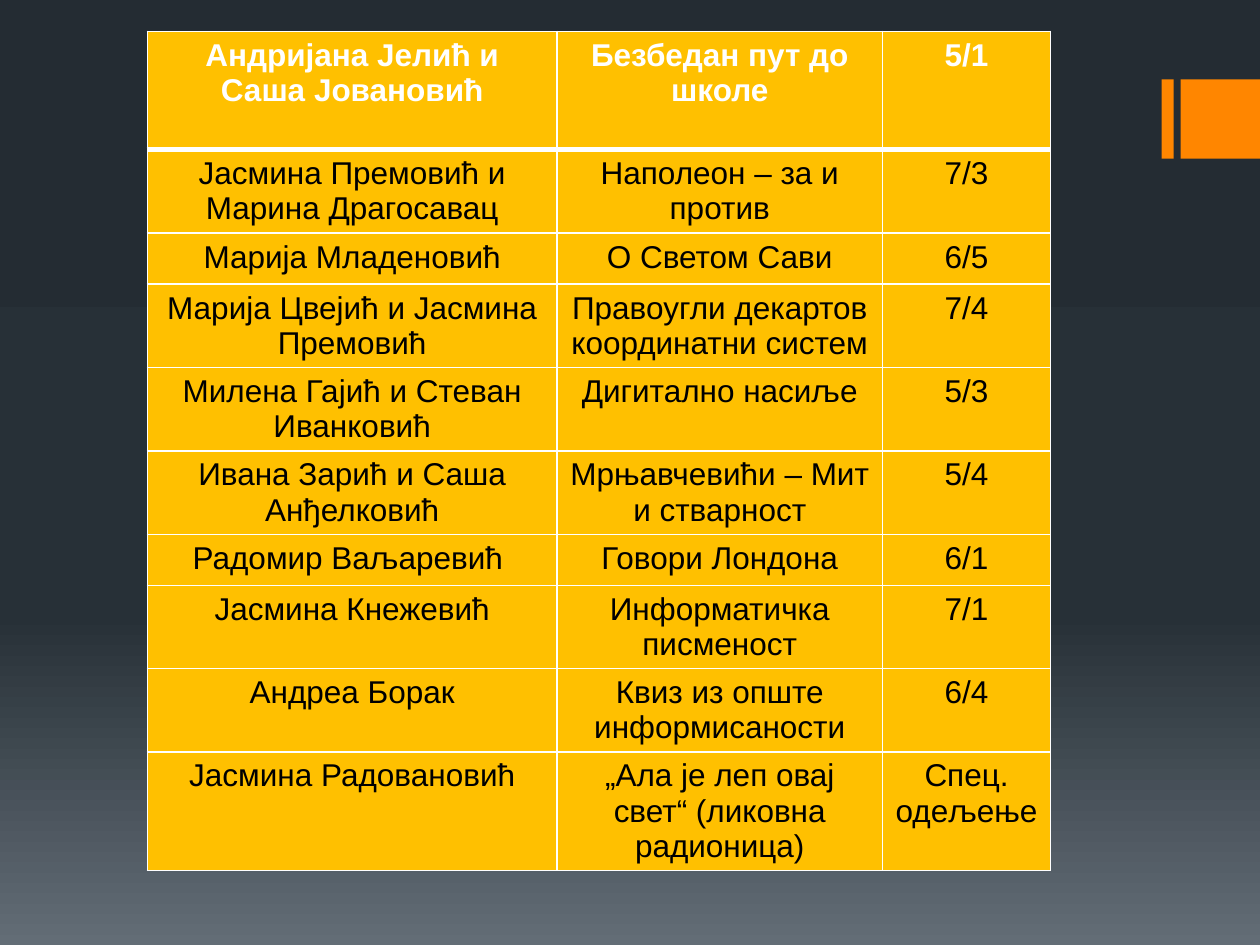
from copy import deepcopy

from lxml.etree import SubElement
from pptx import Presentation
from pptx.dml.color import RGBColor
from pptx.enum.shapes import MSO_SHAPE
from pptx.enum.text import PP_ALIGN
from pptx.oxml.ns import qn
from pptx.util import Cm, Pt

WHITE = RGBColor(0xFF, 0xFF, 0xFF)
BLACK = RGBColor(0x00, 0x00, 0x00)
AMBER = RGBColor(0xFF, 0xC0, 0x00)
ORANGE = RGBColor(0xFF, 0x86, 0x00)
BACKGROUND_STOPS = [
    (0, RGBColor(0x24, 0x2C, 0x33)),
    (0.65, RGBColor(0x27, 0x30, 0x37)),
    (1, RGBColor(0x63, 0x6D, 0x76)),
]

COLUMN_WIDTHS = [8.26, 6.56, 3.39]
HEIGHT_BY_LINES = {1: 1.03, 2: 1.68, 3: 2.39}
WORKSHOPS = [
    (3, "Андријана Јелић и Саша Јовановић", "Безбедан пут до школе", "5/1"),
    (2, "Јасмина Премовић и Марина Драгосавац", "Наполеон – за и против", "7/3"),
    (1, "Марија Младеновић", "О Светом Сави", "6/5"),
    (2, "Марија Цвејић и Јасмина Премовић", "Правоугли декартов координатни систем", "7/4"),
    (2, "Милена Гајић и Стеван Иванковић", "Дигитално насиље", "5/3"),
    (2, "Ивана Зарић и Саша Анђелковић", "Мрњавчевићи – Мит и стварност", "5/4"),
    (1, "Радомир Ваљаревић ", "Говори Лондона", "6/1"),
    (2, "Јасмина Кнежевић", "Информатичка писменост", "7/1"),
    (2, "Андреа Борак", "Квиз из опште информисаности", "6/4"),
    (3, "Јасмина Радовановић", "„Ала је леп овај свет“ (ликовна радионица)", "Спец.\nодељење"),
]


def paint_background(slide):
    fill = slide.background.fill
    fill.gradient()
    fill.gradient_angle = 270
    stop_list = slide.element.find(".//" + qn("a:gsLst"))
    stop_list.append(deepcopy(stop_list[0]))
    for stop, (position, color) in zip(fill.gradient_stops, BACKGROUND_STOPS):
        stop.position = position
        stop.color.rgb = color


def add_bar(slide, left, width):
    shape = slide.shapes.add_shape(
        MSO_SHAPE.RECTANGLE, Cm(left), Cm(1.6), Cm(width), Cm(1.6)
    )
    shape.shadow.inherit = False
    shape.fill.solid()
    shape.fill.fore_color.rgb = ORANGE
    shape.line.fill.background()


def set_borders(cell, top, bottom):
    properties = cell._tc.get_or_add_tcPr()
    for side, width in (("L", 1), ("R", 1), ("T", top), ("B", bottom)):
        line = SubElement(properties, qn(f"a:ln{side}"), w=str(Pt(width)))
        solid = SubElement(line, qn("a:solidFill"))
        SubElement(solid, qn("a:srgbClr"), val=str(WHITE))


def format_cell(cell, text, row):
    is_header = row == 0
    set_borders(cell, top=3 if row == 1 else 1, bottom=3 if is_header else 1)
    cell.fill.solid()
    cell.fill.fore_color.rgb = AMBER
    cell.text = text
    for paragraph in cell.text_frame.paragraphs:
        paragraph.alignment = PP_ALIGN.CENTER
        paragraph.font.name = "Arial"
        paragraph.font.size = Pt(18)
        paragraph.font.bold = is_header
        paragraph.font.color.rgb = WHITE if is_header else BLACK


def add_workshop_table(slide):
    heights = [HEIGHT_BY_LINES[lines] for lines, *_ in WORKSHOPS]
    table = slide.shapes.add_table(
        len(WORKSHOPS), len(COLUMN_WIDTHS),
        Cm(2.97), Cm(0.63), Cm(sum(COLUMN_WIDTHS)), Cm(sum(heights)),
    ).table
    for column, width in zip(table.columns, COLUMN_WIDTHS):
        column.width = Cm(width)
    for row, (height, (_, *texts)) in enumerate(zip(heights, WORKSHOPS)):
        table.rows[row].height = Cm(height)
        for column, text in enumerate(texts):
            format_cell(table.cell(row, column), text, row)


def main():
    presentation = Presentation()
    presentation.slide_width = Cm(25.4)
    presentation.slide_height = Cm(19.05)
    slide = presentation.slides.add_slide(presentation.slide_layouts[6])
    paint_background(slide)
    add_bar(slide, 23.42, 0.24)
    add_bar(slide, 23.8, 1.6)
    add_workshop_table(slide)
    presentation.save("out.pptx")


if __name__ == "__main__":
    main()
